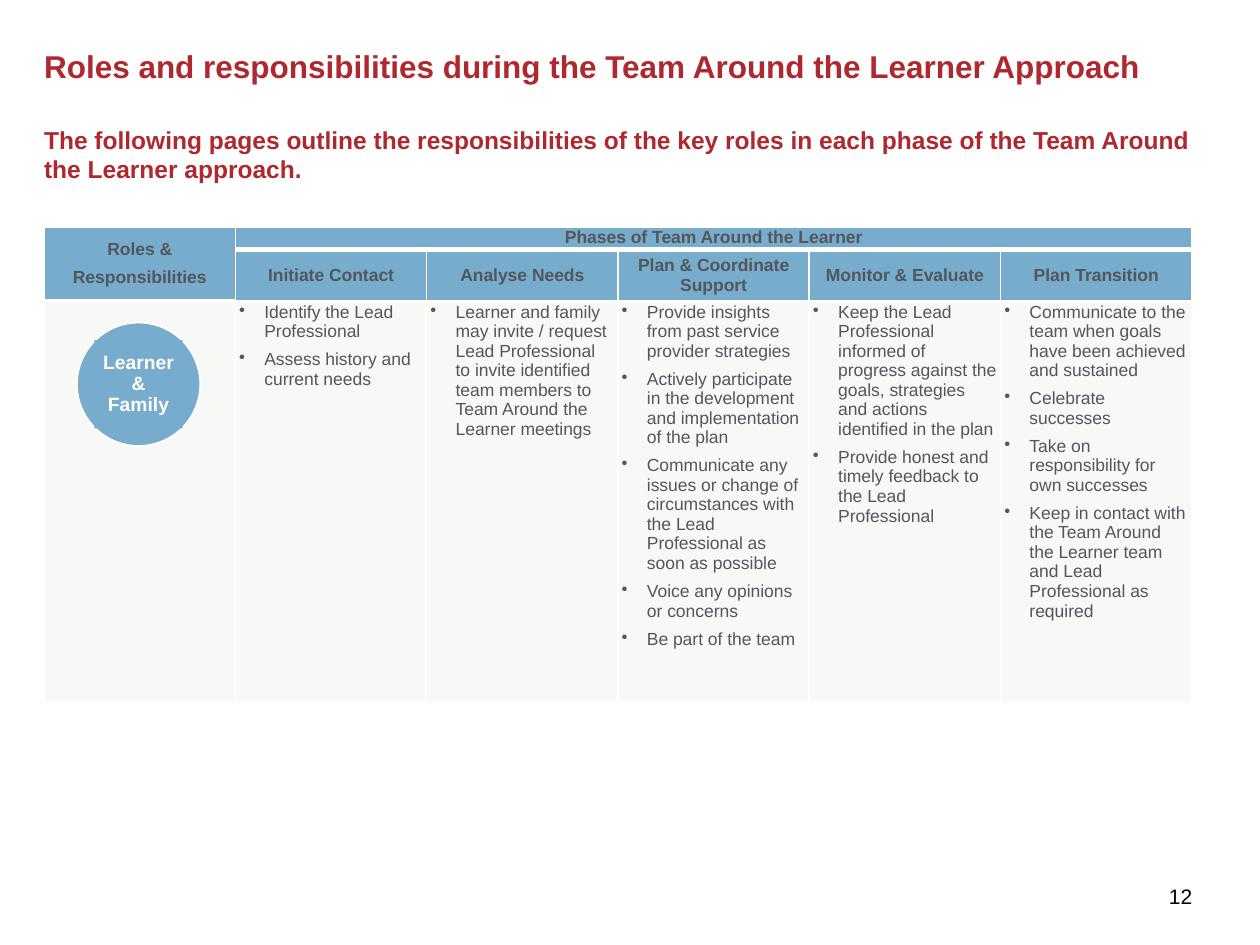
import pptx
import pptx.dml.color
import pptx.enum.shapes
import pptx.enum.text
import pptx.oxml
import pptx.oxml.ns
import pptx.util

Inches, Pt = pptx.util.Inches, pptx.util.Pt
RGBColor = pptx.dml.color.RGBColor
ANCHOR, ALIGN = pptx.enum.text.MSO_ANCHOR, pptx.enum.text.PP_ALIGN
SHAPE = pptx.enum.shapes.MSO_SHAPE

RED = RGBColor(0xAF, 0x27, 0x2F)
BLUE = RGBColor(0x77, 0xAC, 0xCD)
PALE = RGBColor(0xF8, 0xF8, 0xF7)
GREY = RGBColor(0x53, 0x56, 0x5A)
WHITE = RGBColor(0xFF, 0xFF, 0xFF)
BLACK = RGBColor(0, 0, 0)

PHASES = [
    ("Initiate Contact", [
        "Identify the Lead Professional",
        "Assess history and current needs"]),
    ("Analyse Needs", [
        "Learner and family may invite / request Lead Professional to invite "
        "identified team members to Team Around the Learner meetings"]),
    ("Plan & Coordinate Support", [
        "Provide insights from past service provider strategies",
        "Actively participate in the development and implementation of the plan",
        "Communicate any issues or change of circumstances with the Lead "
        "Professional as soon as possible",
        "Voice any opinions or concerns",
        "Be part of the team"]),
    ("Monitor & Evaluate", [
        "Keep the Lead Professional informed of progress against the goals, "
        "strategies and actions identified in the plan",
        "Provide honest and timely feedback to the Lead Professional"]),
    ("Plan Transition", [
        "Communicate to the team when goals have been achieved and sustained",
        "Celebrate successes",
        "Take on responsibility for own successes",
        "Keep in contact with the Team Around the Learner team and Lead "
        "Professional as required"]),
]


def add_text(p, text, size, color, bold=False):
    r = p.add_run()
    r.text = text
    r.font.name = "Arial"
    r.font.size = Pt(size)
    r.font.bold = bold
    r.font.color.rgb = color


def fill_cell(cell, lines, bulleted=False):
    tf = cell.text_frame
    for i, line in enumerate(lines):
        p = tf.paragraphs[0] if i == 0 else tf.add_paragraph()
        if bulleted:
            pPr = p._p.get_or_add_pPr()
            pPr.set("marL", str(Inches(0.2)))
            pPr.set("indent", str(-Inches(0.2)))
            pPr.append(pptx.oxml.parse_xml(
                f'<a:buChar {pptx.oxml.ns.nsdecls("a")} char="•"/>'))
        else:
            p.alignment = ALIGN.CENTER
        p.space_before = Pt(2.4 if i else 0)
        p.space_after = Pt(2.4)
        add_text(p, line, 10, GREY, not bulleted)


prs = pptx.Presentation()
prs.slide_width, prs.slide_height = Inches(10), Inches(7.5)
s = prs.slides.add_slide(prs.slide_layouts[1])

# Title and introduction
for sp, top, height, size, spacing, text in [
    (s.shapes.title, 0.41, 0.86, 18, 0.9,
     "Roles and responsibilities during the Team Around the Learner Approach"),
    (s.placeholders[1], 0.99, 5.71, 14, 1,
     "The following pages outline the responsibilities of the key roles in "
     "each phase of the Team Around the Learner approach."),
]:
    sp.left, sp.top = Inches(0.35), Inches(top)
    sp.width, sp.height = Inches(9.25), Inches(height)
    tf = sp.text_frame
    tf.margin_left = tf.margin_right = tf.margin_top = tf.margin_bottom = 0
    tf.vertical_anchor = ANCHOR.TOP
    tf.auto_size = pptx.enum.text.MSO_AUTO_SIZE.NONE
    p = tf.paragraphs[0]
    pPr = p._p.get_or_add_pPr()
    pPr.set("marL", "0")
    pPr.set("indent", "0")
    pPr.append(pptx.oxml.parse_xml(f'<a:buNone {pptx.oxml.ns.nsdecls("a")}/>'))
    p.alignment = ALIGN.LEFT
    p.line_spacing = spacing
    p.space_before = Pt(0)
    add_text(p, text, size, RED, True)

# Responsibilities table
row_heights = [0.18, 0.41, 3.18]
table = s.shapes.add_table(3, 6, Inches(0.35), Inches(1.8), Inches(9.11),
                           Inches(sum(row_heights))).table
for row, height in zip(table.rows, row_heights):
    row.height = Inches(height)

for r in range(3):
    for c in range(6):
        cell = table.cell(r, c)
        cell.margin_left = cell.margin_right = Inches(0.03)
        cell.margin_top = cell.margin_bottom = Inches(0.01)
        cell.vertical_anchor = ANCHOR.TOP if r == 2 else ANCHOR.MIDDLE
        cell.fill.solid()
        cell.fill.fore_color.rgb = PALE if r == 2 else BLUE
        thick_bottom = r == 0 or (r, c) == (1, 0)
        borders = [("lnL", 1), ("lnR", 1), ("lnB", 3 if thick_bottom else 1)]
        if r == 0:
            borders.insert(2, ("lnT", 1))
        for i, (edge, width) in enumerate(borders):
            cell._tc.get_or_add_tcPr().insert(i, pptx.oxml.parse_xml(
                f'<a:{edge} {pptx.oxml.ns.nsdecls("a")} w="{Pt(width)}">'
                f'<a:solidFill><a:srgbClr val="{WHITE}"/></a:solidFill></a:{edge}>'))

table.cell(0, 0).merge(table.cell(1, 0))
table.cell(0, 1).merge(table.cell(0, 5))
fill_cell(table.cell(0, 0), ["Roles &", "Responsibilities"])
fill_cell(table.cell(0, 1), ["Phases of Team Around the Learner"])
table.cell(0, 1).vertical_anchor = ANCHOR.TOP
for c, (phase, duties) in enumerate(PHASES, start=1):
    fill_cell(table.cell(1, c), [phase])
    fill_cell(table.cell(2, c), duties, bulleted=True)

# Role badge
circle = s.shapes.add_shape(SHAPE.OVAL, Inches(0.61), Inches(2.56),
                            Inches(0.98), Inches(0.98))
circle.line.color.rgb = WHITE
circle.line.width = Pt(1)
label = s.shapes.add_shape(SHAPE.RECTANGLE, Inches(0.75), Inches(2.7),
                           Inches(0.7), Inches(0.7))
label.line.fill.background()
for sp in (circle, label):
    sp.shadow.inherit = False
    sp.fill.solid()
    sp.fill.fore_color.rgb = BLUE
tf = label.text_frame
tf.word_wrap = True
tf.margin_left = tf.margin_right = tf.margin_top = tf.margin_bottom = Inches(0.06)
tf.vertical_anchor = ANCHOR.MIDDLE
p = tf.paragraphs[0]
p.alignment = ALIGN.CENTER
p.line_spacing = 0.9
add_text(p, "Learner & Family", 11, WHITE, True)

# Page number
tf = s.shapes.add_textbox(Inches(9.13), Inches(6.91),
                          Inches(0.48), Inches(0.4)).text_frame
tf.word_wrap = True
tf.vertical_anchor = ANCHOR.MIDDLE
p = tf.paragraphs[0]
p.alignment = ALIGN.CENTER
add_text(p, "12", 12, BLACK)

prs.save("out.pptx")
